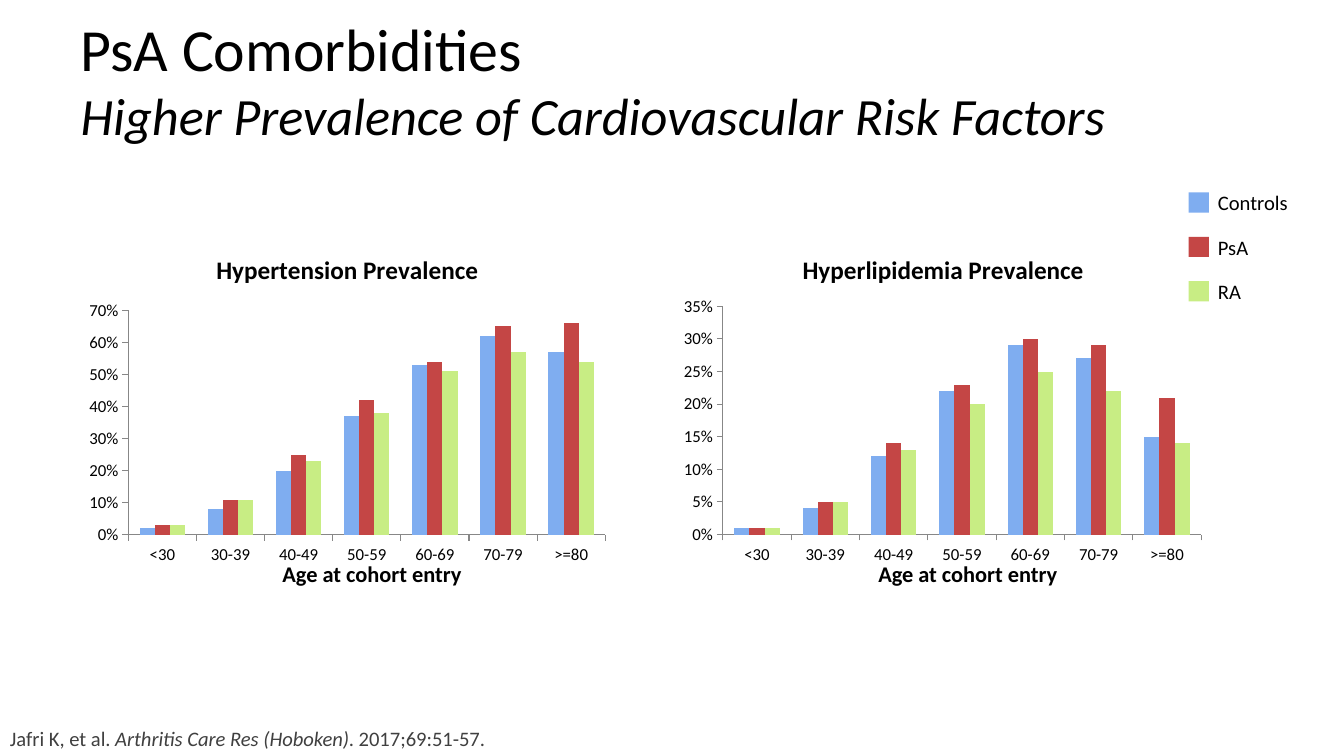
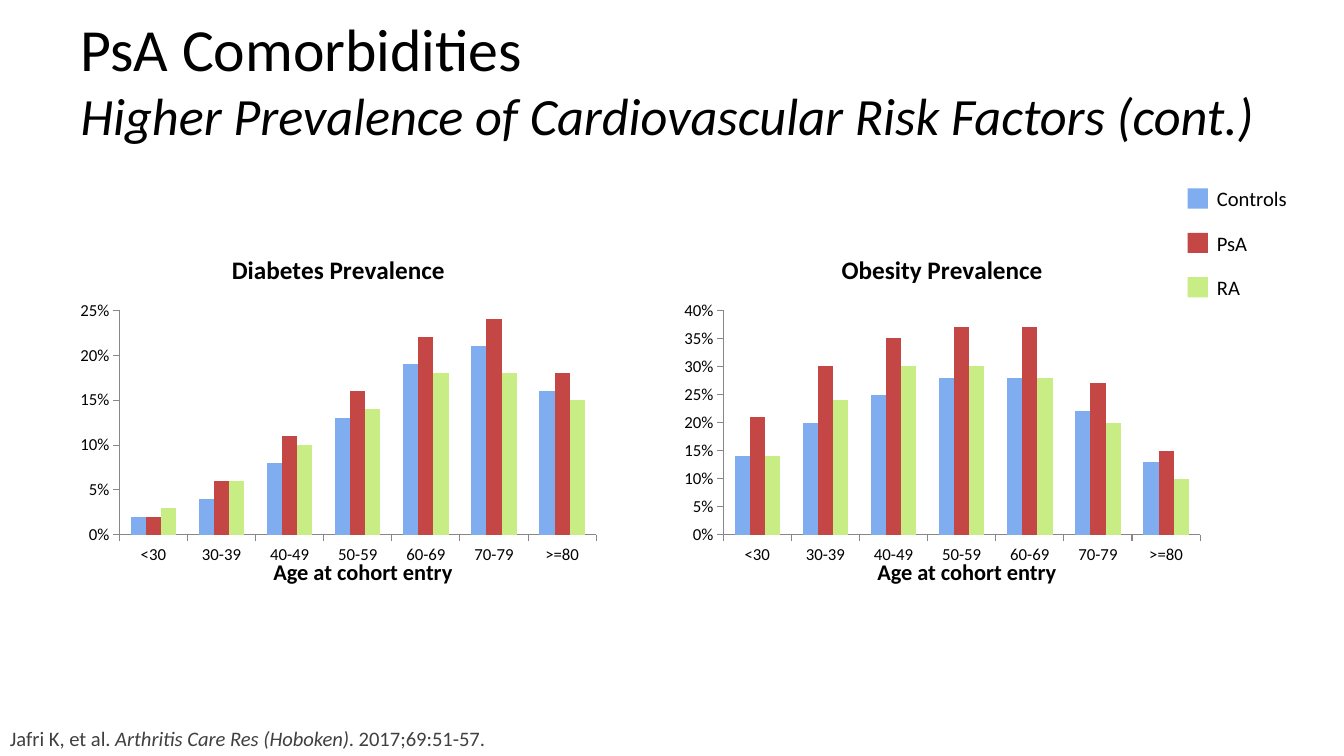
from lxml import etree
from pptx import Presentation
from pptx.chart.data import CategoryChartData
from pptx.dml.color import RGBColor
from pptx.enum.chart import XL_CHART_TYPE, XL_TICK_MARK
from pptx.enum.shapes import MSO_SHAPE
from pptx.enum.text import MSO_ANCHOR, PP_ALIGN
from pptx.oxml.ns import qn
from pptx.util import Emu, Pt

COLUMNS = XL_CHART_TYPE.COLUMN_CLUSTERED
TICK_OUT, TICK_NONE = XL_TICK_MARK.OUTSIDE, XL_TICK_MARK.NONE
RECTANGLE = MSO_SHAPE.RECTANGLE
MIDDLE, BOTTOM, TOP = MSO_ANCHOR.MIDDLE, MSO_ANCHOR.BOTTOM, MSO_ANCHOR.TOP
LEFT, CENTER = PP_ALIGN.LEFT, PP_ALIGN.CENTER

PX = 9144  # 100 px to the inch
FONT = "Calibri"
COLORS = {"text": "000000", "source": "404040", "axis": "878787",
          "Controls": "7FADF0", "PsA": "C44645", "RA": "C8ED84"}
GROUPS = ("Controls", "PsA", "RA")
AGES = ("<30", "30-39", "40-49", "50-59", "60-69", "70-79", ">=80")
HEADING = "PsA Comorbidities"
AXIS_CAPTION = "Age at cohort entry"
CITATION = (("Jafri K, et al. ", False), ("Arthritis Care Res (Hoboken)", True),
            (". 2017;69:51-57.", False))

SMALL_SIZE = 14.67
CHART_TOP, CHART_WIDTH, CHART_HEIGHT = 234, 533, 333
CAPTION_OFFSET, CAPTION_WIDTH, CAPTION_HEIGHT = 174, 234, 37
SWATCH, LEGEND_PITCH = 20, 44
LABEL_WIDTH, LABEL_HEIGHT, LABEL_RISE = 120, 33, 5

SLIDES = [
    {"subtitle": "Higher Prevalence of Cardiovascular Risk Factors",
     "legend": (1179, 191), "caption_top": 551,
     "charts": [
         {"title": "Hypertension Prevalence", "left": 78, "max": 0.7, "step": 0.1,
          "values": ((0.02, 0.08, 0.2, 0.37, 0.53, 0.62, 0.57),
                     (0.03, 0.11, 0.25, 0.42, 0.54, 0.65, 0.66),
                     (0.03, 0.11, 0.23, 0.38, 0.51, 0.57, 0.54))},
         {"title": "Hyperlipidemia Prevalence", "left": 669, "max": 0.35, "step": 0.05,
          "plot_area": {"x": 0.09, "y": 0.21, "w": 0.89, "h": 0.68},
          "values": ((0.01, 0.04, 0.12, 0.22, 0.29, 0.27, 0.15),
                     (0.01, 0.05, 0.14, 0.23, 0.3, 0.29, 0.21),
                     (0.01, 0.05, 0.13, 0.2, 0.25, 0.22, 0.14))}]},
    {"subtitle": "Higher Prevalence of Cardiovascular Risk Factors (cont.)",
     "legend": (1178, 187), "caption_top": 549,
     "charts": [
         {"title": "Diabetes Prevalence", "left": 69, "max": 0.25, "step": 0.05,
          "values": ((0.02, 0.04, 0.08, 0.13, 0.19, 0.21, 0.16),
                     (0.02, 0.06, 0.11, 0.16, 0.22, 0.24, 0.18),
                     (0.03, 0.06, 0.1, 0.14, 0.18, 0.18, 0.15))},
         {"title": "Obesity Prevalence", "left": 668, "max": 0.4, "step": 0.05,
          "values": ((0.14, 0.2, 0.25, 0.28, 0.28, 0.22, 0.13),
                     (0.21, 0.3, 0.35, 0.37, 0.37, 0.27, 0.15),
                     (0.14, 0.24, 0.3, 0.3, 0.28, 0.2, 0.1))}]},
]


def px(*lengths):
    return [Emu(length * PX) for length in lengths]


def rgb(name):
    return RGBColor.from_string(COLORS[name])


def set_font(font, size, color="text", **formats):
    for name, value in {"name": FONT, "size": Pt(size), **formats}.items():
        setattr(font, name, value)
    font.color.rgb = rgb(color)


def write_text(box, paragraphs, anchor=TOP, align=LEFT, insets=(10, 5), spacing=1.0):
    """Fill a box; each paragraph is a list of (text, font formats) spans."""
    frame = box.text_frame
    across, down = px(*insets)
    for name, value in {"word_wrap": True, "vertical_anchor": anchor,
                        "margin_left": across, "margin_right": across,
                        "margin_top": down, "margin_bottom": down}.items():
        setattr(frame, name, value)
    for index, spans in enumerate(paragraphs):
        para = frame.add_paragraph() if index else frame.paragraphs[0]
        para.alignment = align
        para.line_spacing = spacing
        for text, formats in spans:
            span = para.add_run()
            span.text = text
            set_font(span.font, **formats)


def add_text(page, bounds, paragraphs, **layout):
    write_text(page.shapes.add_textbox(*px(*bounds)), paragraphs, **layout)


def place_plot_area(chart, fractions):
    """Fix the inner plot area as fractions of the chart's size."""
    plot_area = chart.plots[0]._element.getparent()
    for old in plot_area.findall(qn("c:layout")):
        plot_area.remove(old)
    layout = etree.Element(qn("c:layout"))
    plot_area.insert(0, layout)
    manual = etree.SubElement(layout, qn("c:manualLayout"))
    settings = {"layoutTarget": "inner", "xMode": "edge", "yMode": "edge", **fractions}
    for name, value in settings.items():
        etree.SubElement(manual, qn(f"c:{name}")).set("val", str(value))


def add_prevalence_chart(page, content):
    data = CategoryChartData(number_format="0%")
    data.categories = AGES
    for group, values in zip(GROUPS, content["values"]):
        data.add_series(group, values)
    bounds = px(content["left"], CHART_TOP, CHART_WIDTH, CHART_HEIGHT)
    chart = page.shapes.add_chart(COLUMNS, *bounds, data).chart
    set_font(chart.font, 10)
    chart.has_legend = False
    chart.has_title = True
    title = chart.chart_title
    title.include_in_layout = False
    title.text_frame.text = content["title"]
    set_font(title.text_frame.paragraphs[0].runs[0].font, 18, bold=True)

    plot = chart.plots[0]
    for name, value in {"gap_width": 150, "overlap": 0, "vary_by_categories": False}.items():
        setattr(plot, name, value)
    for group, series in zip(GROUPS, plot.series):
        series.format.fill.solid()
        series.format.fill.fore_color.rgb = rgb(group)
        series.invert_if_negative = False

    for axis in (chart.category_axis, chart.value_axis):
        axis.has_major_gridlines = False
        axis.major_tick_mark = TICK_OUT
        axis.minor_tick_mark = TICK_NONE
        axis.format.line.color.rgb = rgb("axis")
        axis.format.line.width = Pt(0.75)
        set_font(axis.tick_labels.font, 12)
    for name, value in {"minimum_scale": 0, "maximum_scale": content["max"],
                        "major_unit": content["step"]}.items():
        setattr(chart.value_axis, name, value)
    chart.value_axis.tick_labels.number_format = "0%"
    chart.value_axis.tick_labels.number_format_is_linked = False
    if "plot_area" in content:
        place_plot_area(chart, content["plot_area"])


def add_label_outline(shapes, left, top):
    right, bottom = left + LABEL_WIDTH, top + LABEL_HEIGHT
    builder = shapes.build_freeform(left, top, scale=PX)
    builder.add_line_segments([(right, top), (right, bottom), (left, bottom)], close=True)
    label = builder.convert_to_shape()
    label.fill.background()
    return label


def add_legend(page, left, top):
    shapes = page.shapes.add_group_shape().shapes
    for index, group in enumerate(GROUPS):
        row_top = top + index * LEGEND_PITCH
        swatch = shapes.add_shape(RECTANGLE, *px(left, row_top, SWATCH, SWATCH))
        swatch.fill.solid()
        swatch.fill.fore_color.rgb = rgb(group)
        label = add_label_outline(shapes, left + SWATCH // 2, row_top - LABEL_RISE)
        write_text(label, [[(group, {"size": SMALL_SIZE})]],
                   anchor=MIDDLE, insets=(19, 19), spacing=0.9)
        for shape in (swatch, label):
            shape.shadow.inherit = False
            shape.line.fill.background()


def add_page(deck, content):
    page = deck.slides.add_slide(deck.slide_layouts[6])
    add_text(page, (67, 6, 1200, 144),
             [[(HEADING, {"size": 42.67})],
              [(content["subtitle"], {"size": 37.33, "italic": True})]],
             anchor=MIDDLE, insets=(13, 7))
    for chart in content["charts"]:
        add_prevalence_chart(page, chart)
        add_text(page, (chart["left"] + CAPTION_OFFSET, content["caption_top"],
                        CAPTION_WIDTH, CAPTION_HEIGHT),
                 [[(AXIS_CAPTION, {"size": 16, "bold": True})]], align=CENTER)
    add_legend(page, *content["legend"])
    add_text(page, (0, 715, 883, 35),
             [[(text, {"size": SMALL_SIZE, "color": "source", "italic": italic})
               for text, italic in CITATION]], anchor=BOTTOM)


def main():
    deck = Presentation()
    deck.slide_width, deck.slide_height = px(1333, 750)
    for content in SLIDES:
        add_page(deck, content)
    deck.save("out.pptx")


if __name__ == "__main__":
    main()
